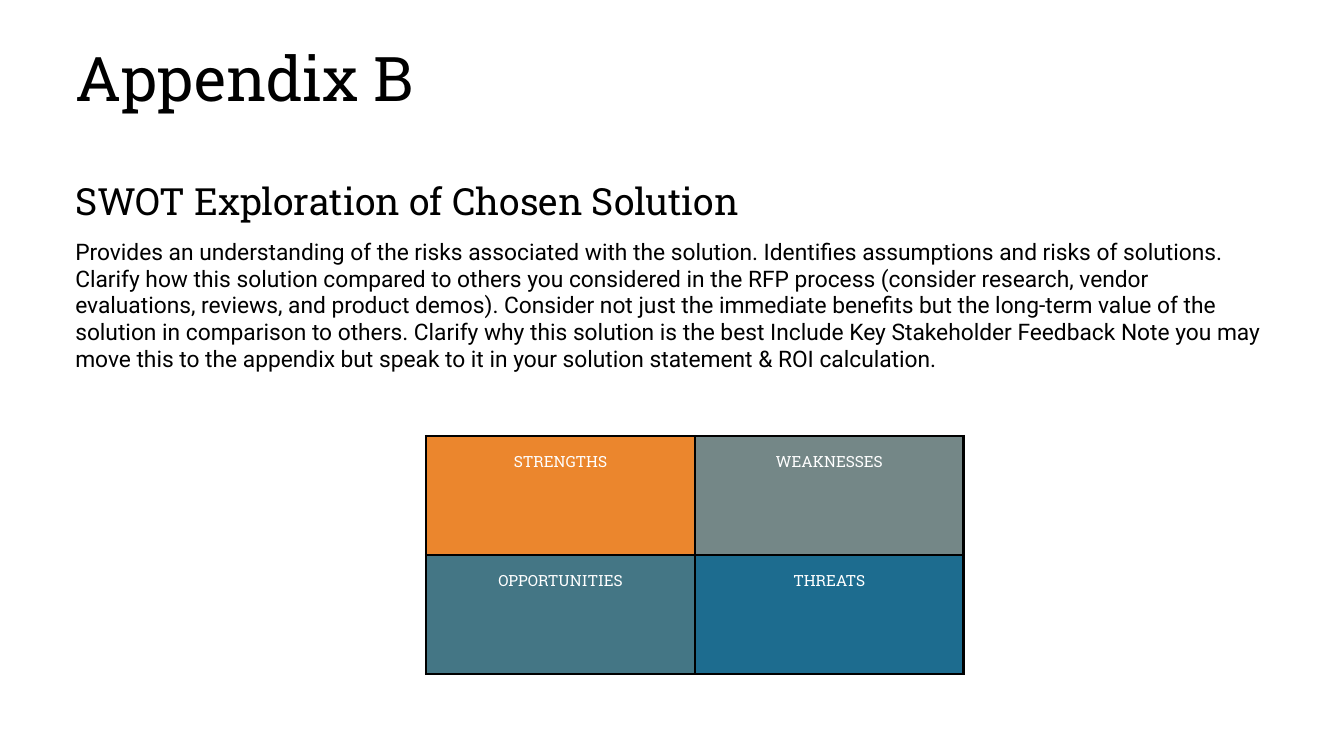
from dataclasses import dataclass

from lxml import etree
from pptx import Presentation
from pptx import util as u
from pptx.dml.color import RGBColor
from pptx.enum import text
from pptx.oxml.ns import qn

EMU_PER_PX = 9144


@dataclass(frozen=True)
class Theme:
    heading_font: str = "Roboto Slab"
    body_font: str = "Roboto"
    ink: str = "000000"
    label: str = "FFFFFF"
    strengths: str = "EB862D"
    weaknesses: str = "748787"
    opportunities: str = "447685"
    threats: str = "1D6C8F"
    title_size: float = 66
    subtitle_size: float = 40.1
    body_size: float = 24.4
    label_size: float = 16.5
    border_width: float = 3


THEME = Theme()

SWOT = [
    [("STRENGTHS", THEME.strengths), ("WEAKNESSES", THEME.weaknesses)],
    [("OPPORTUNITIES", THEME.opportunities), ("THREATS", THEME.threats)],
]

EXPLANATION = (
    "Provides an understanding of the risks associated with the solution. "
    "Identifies assumptions and risks of solutions. Clarify how this solution "
    "compared to others you considered in the RFP process (consider research, "
    "vendor evaluations, reviews, and product demos). Consider not just the "
    "immediate benefits but the long-term value of the solution in comparison "
    "to others. Clarify why this solution is the best Include Key Stakeholder "
    "Feedback Note you may move this to the appendix but speak to it in your "
    "solution statement & ROI calculation."
)


def px(length):
    return u.Emu(length * EMU_PER_PX)


def style_paragraph(paragraph, font, size, color, leading, align):
    paragraph.alignment = align
    paragraph.line_spacing = u.Pt(leading)
    paragraph.space_before = u.Pt(0)
    paragraph.font.name = font
    paragraph.font.size = u.Pt(size)
    paragraph.font.color.rgb = RGBColor.from_string(color)


def write_text(holder, wording, font, size, leading):
    frame = holder.text_frame
    frame.text = wording
    frame.word_wrap = True
    frame.auto_size = text.MSO_AUTO_SIZE.NONE
    frame.vertical_anchor = text.MSO_ANCHOR.TOP
    frame.margin_left = frame.margin_right = 0
    frame.margin_top = frame.margin_bottom = 0
    style_paragraph(frame.paragraphs[0], font, size, THEME.ink, leading,
                    text.PP_ALIGN.LEFT)


def place_title(slide, wording, left, top, width, height):
    title = slide.shapes.title
    title.left, title.top = px(left), px(top)
    title.width, title.height = px(width), px(height)
    write_text(title, wording, THEME.heading_font, THEME.title_size, 85.5)


def add_text(slide, wording, left, top, width, height, font, size, leading):
    box = slide.shapes.add_textbox(px(left), px(top), px(width), px(height))
    write_text(box, wording, font, size, leading)


def add_borders(cell):
    properties = cell._tc.get_or_add_tcPr()
    for position, side in enumerate(("a:lnL", "a:lnR", "a:lnT", "a:lnB")):
        border = etree.Element(qn(side), w=str(u.Pt(THEME.border_width)))
        fill = etree.SubElement(border, qn("a:solidFill"))
        etree.SubElement(fill, qn("a:srgbClr"), val=THEME.ink)
        properties.insert(position, border)


def fill_quadrant(cell, label, color):
    cell.text = label
    cell.fill.solid()
    cell.fill.fore_color.rgb = RGBColor.from_string(color)
    cell.vertical_anchor = text.MSO_ANCHOR.TOP
    cell.margin_left = cell.margin_right = px(21)
    cell.margin_top = cell.margin_bottom = px(21)
    style_paragraph(cell.text_frame.paragraphs[0], THEME.heading_font,
                    THEME.label_size, THEME.label, 23.1, text.PP_ALIGN.CENTER)
    add_borders(cell)


def add_swot(slide, quadrants, left, top, width, height):
    matrix = slide.shapes.add_table(
        len(quadrants), len(quadrants[0]),
        px(left), px(top), px(width), px(height)).table
    matrix.first_row = matrix.horz_banding = False
    for row, entries in enumerate(quadrants):
        for column, (label, color) in enumerate(entries):
            fill_quadrant(matrix.cell(row, column), label, color)


def main():
    deck = Presentation()
    deck.slide_width, deck.slide_height = px(2000), px(1125)
    slide = deck.slides.add_slide(deck.slide_layouts[5])
    place_title(slide, "Appendix B", 112, 51, 1705, 116)
    add_text(slide, "SWOT Exploration of Chosen Solution", 112, 259, 1008, 70,
             THEME.heading_font, THEME.subtitle_size, 52)
    add_text(slide, EXPLANATION, 112, 354, 1775, 200,
             THEME.body_font, THEME.body_size, 28.8)
    add_swot(slide, SWOT, 634, 649, 800, 354)
    deck.save("out.pptx")


if __name__ == "__main__":
    main()
